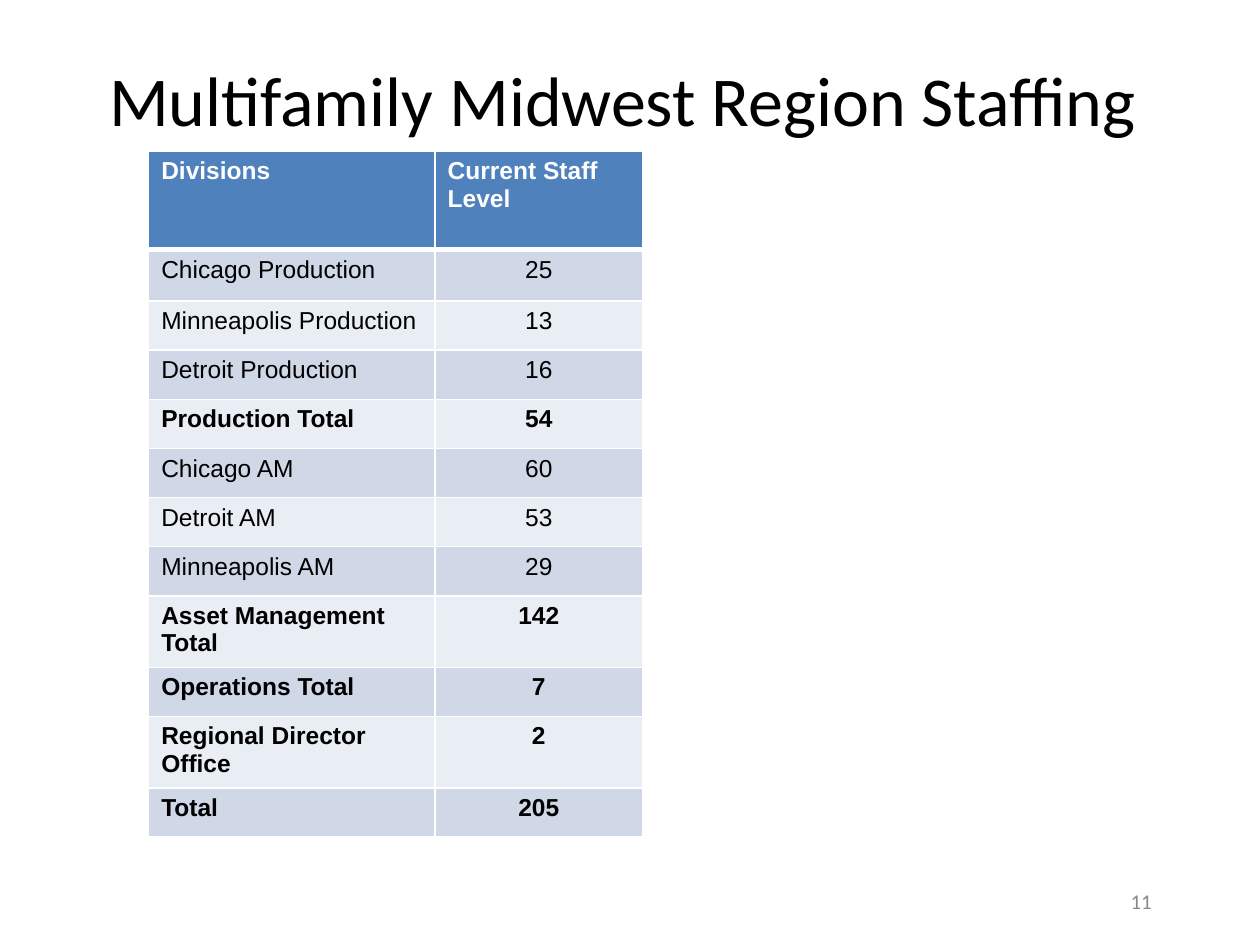
from lxml.etree import SubElement
from pptx import Presentation
from pptx.dml.color import RGBColor
from pptx.enum.text import MSO_ANCHOR, PP_ALIGN
from pptx.oxml.ns import qn
from pptx.util import Inches, Pt

WIDE, HIGH = 10, 7.5
HUES = {"head": "4F81BD", "odd": "D0D8E8", "even": "E9EDF4",
        "line": "FFFFFF", "ink": "000000", "page": "898989"}

# Division, staff level, bold
STAFF = [
    ("Divisions", "Current Staff Level", True),
    ("Chicago Production", "25", False),
    ("Minneapolis Production", "13", False),
    ("Detroit Production", "16", False),
    ("Production Total", "54", True),
    ("Chicago AM", "60", False),
    ("Detroit AM", "53", False),
    ("Minneapolis AM", "29", False),
    ("Asset Management Total", "142", True),
    ("Operations Total", "7", True),
    ("Regional Director Office", "2", True),
    ("Total", "205", True),
]
ROW = 0.39
TALL = {0: 2 * ROW, 1: 0.41, 10: 0.42}  # rows that differ from ROW
SPLIT = 0.58  # share of the table's width in the first column


def area(left, top, width, height):
    """Turn shares of the slide into lengths."""
    return (Inches(left * WIDE), Inches(top * HIGH),
            Inches(width * WIDE), Inches(height * HIGH))


def style(para, face, size, hue, align, bold=False):
    para.alignment = align
    font = para.font
    font.name, font.size, font.bold = face, Pt(size), bold
    font.color.rgb = RGBColor.from_string(HUES[hue])


def label(slide, box, text, size, hue, align, anchor):
    frame = slide.shapes.add_textbox(*box).text_frame
    frame.word_wrap = True
    frame.vertical_anchor = anchor
    frame.text = text
    style(frame.paragraphs[0], "Calibri", size, hue, align)


def edge(cell, base):
    """Draw the four cell borders; they must precede the fill."""
    props = cell._tc.get_or_add_tcPr()
    for side, width in (("L", 1), ("R", 1), ("T", 1), ("B", base)):
        line = SubElement(props, qn(f"a:ln{side}"), w=str(Pt(width)))
        fill = SubElement(line, qn("a:solidFill"))
        SubElement(fill, qn("a:srgbClr"), val=HUES["line"])


def grid(slide, box):
    table = slide.shapes.add_table(len(STAFF), 2, *box).table
    for col, share in zip(table.columns, (SPLIT, 1 - SPLIT)):
        col.width = int(box[2] * share)
    for i, (name, count, bold) in enumerate(STAFF):
        table.rows[i].height = Inches(TALL.get(i, ROW))
        back = "head" if i == 0 else "odd" if i % 2 else "even"
        for j, text in enumerate((name, count)):
            cell = table.cell(i, j)
            cell.text = text
            edge(cell, 1 if i else 3)
            cell.fill.solid()
            cell.fill.fore_color.rgb = RGBColor.from_string(HUES[back])
            align = PP_ALIGN.CENTER if i and j else PP_ALIGN.LEFT
            style(cell.text_frame.paragraphs[0], "Arial", 14,
                  "ink" if i else "line", align, bold)


def main():
    deck = Presentation()
    deck.slide_width, deck.slide_height = Inches(WIDE), Inches(HIGH)
    slide = deck.slides.add_slide(deck.slide_layouts[6])
    # Page number
    label(slide, area(0.717, 0.927, 0.207, 0.053), "11", 12, "page",
          PP_ALIGN.RIGHT, MSO_ANCHOR.MIDDLE)
    # Title
    label(slide, area(0.064, 0.053, 0.86, 0.103),
          "Multifamily Midwest Region Staffing", 40, "ink",
          PP_ALIGN.CENTER, MSO_ANCHOR.TOP)
    # Staffing table
    grid(slide, area(0.118, 0.16, 0.392, 0.684))
    deck.save("out.pptx")


if __name__ == "__main__":
    main()
